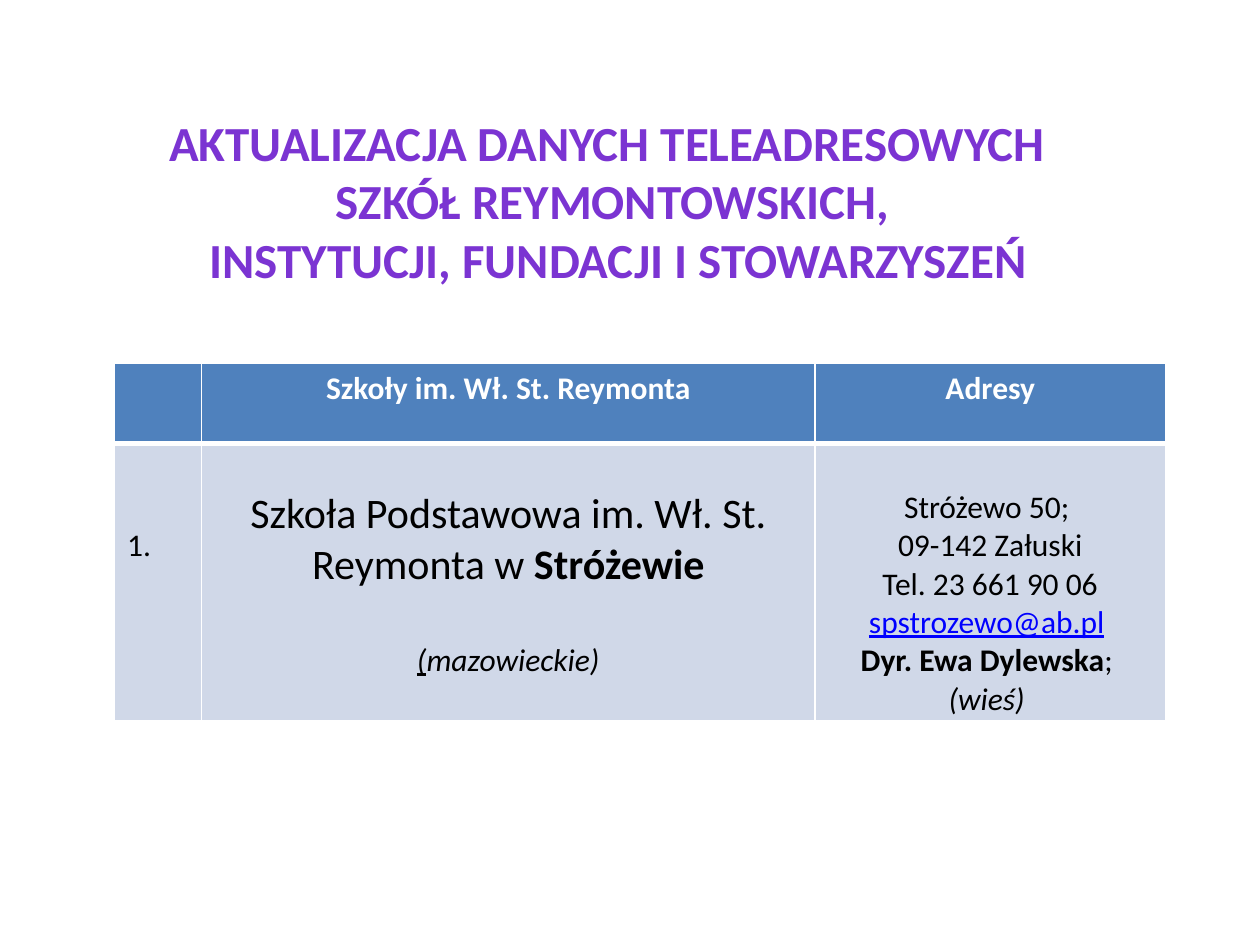
"""Build a slide with contact details of a school named after Reymont."""
from lxml.etree import SubElement
from pptx import Presentation
from pptx.dml.color import RGBColor
from pptx.enum.text import PP_ALIGN
from pptx.oxml.ns import qn
from pptx.util import Inches, Pt

COLORS = {
    "title": "7B34D2",
    "header": "4F81BD",
    "body": "D0D8E8",
    "border": "FFFFFF",
    "light": "FFFFFF",
    "dark": "000000",
    "email": "0000FF",
}
FONT = "Calibri"
COLUMN_WIDTHS = (0.69, 4.87, 2.78)
ROW_HEIGHTS = (0.64, 2.2)
INSET = 0.05
LINE = 0.305

TITLE = (
    "AKTUALIZACJA DANYCH TELEADRESOWYCH ",
    "SZKÓŁ REYMONTOWSKICH,",
    " INSTYTUCJI, FUNDACJI I STOWARZYSZEŃ",
)
HEADERS = ("", "Szkoły im. Wł. St. Reymonta", "Adresy")
NUMBER = [[("1.", {})]]
SCHOOL = [
    [
        ("Szkoła Podstawowa im. Wł. St. Reymonta w ", {"size": 24}),
        ("Stróżewie", {"size": 24, "bold": True}),
    ],
    [
        ("(", {"italic": True, "underline": True}),
        ("mazowieckie)", {"italic": True}),
    ],
]
ADDRESS = [
    [("Stróżewo 50; ", {})],
    [("09-142 Załuski", {})],
    [("Tel. 23 661 90 06", {})],
    [("spstrozewo@ab.pl", {"color": "email", "underline": True}), (" ", {})],
    [
        ("Dyr. Ewa Dylewska", {"bold": True}),
        (";  ", {}),
        ("(wieś) ", {"italic": True}),
    ],
]


def add_run(paragraph, text, size=18, color="dark", bold=False, italic=False, underline=False):
    """Append formatted text to a paragraph."""
    run = paragraph.add_run()
    run.text = text
    font = run.font
    font.name, font.size = FONT, Pt(size)
    font.bold, font.italic, font.underline = bold, italic, underline
    font.color.rgb = RGBColor.from_string(COLORS[color])


def write_lines(frame, lines, align=PP_ALIGN.CENTER, gap=0):
    """Write each line of (text, format) pairs as a paragraph."""
    for index, line in enumerate(lines):
        paragraph = frame.add_paragraph() if index else frame.paragraphs[0]
        paragraph.alignment = align
        if index and gap:
            paragraph.space_before = Pt(gap)
        for text, style in line:
            add_run(paragraph, text, **style)


def style_cell(cell, fill, top=1, bottom=1):
    """Fill a cell and give it solid borders with widths in points."""
    properties = cell._tc.get_or_add_tcPr()
    for side, width in (("L", 1), ("R", 1), ("T", top), ("B", bottom)):
        border = SubElement(properties, qn(f"a:ln{side}"), w=str(Pt(width)))
        solid = SubElement(border, qn("a:solidFill"))
        SubElement(solid, qn("a:srgbClr"), val=COLORS["border"])
    cell.fill.solid()
    cell.fill.fore_color.rgb = RGBColor.from_string(COLORS[fill])


def add_title(slide):
    """Add the three-line heading."""
    heading = slide.shapes.add_textbox(Inches(1.2), Inches(0.84), Inches(7.32), Inches(1.82))
    style = {"size": 28, "color": "title", "bold": True}
    heading.text_frame.word_wrap = False
    write_lines(heading.text_frame, [[(line, style)] for line in TITLE])


def add_school_table(slide):
    """Add the table of schools and addresses."""
    schools = slide.shapes.add_table(
        len(ROW_HEIGHTS), len(COLUMN_WIDTHS), Inches(0.91), Inches(2.88),
        Inches(sum(COLUMN_WIDTHS)), Inches(sum(ROW_HEIGHTS)),
    ).table
    for column, width in zip(schools.columns, COLUMN_WIDTHS):
        column.width = Inches(width)
    for row, height in zip(schools.rows, ROW_HEIGHTS):
        row.height = Inches(height)

    for cell, label in zip(schools.rows[0].cells, HEADERS):
        style_cell(cell, "header", bottom=3)
        if label:
            write_lines(cell.text_frame, [[(label, {"color": "light", "bold": True})]])

    entries = (
        (NUMBER, 2, PP_ALIGN.LEFT, 0),
        (SCHOOL, 1, PP_ALIGN.CENTER, 29),
        (ADDRESS, 1, PP_ALIGN.CENTER, 0),
    )
    for cell, (lines, offset, align, gap) in zip(schools.rows[1].cells, entries):
        style_cell(cell, "body", top=3)
        cell.margin_top = Inches(INSET + offset * LINE)
        cell.margin_bottom = 0
        write_lines(cell.text_frame, lines, align, gap)


def main():
    """Create and save the presentation."""
    presentation = Presentation()
    presentation.slide_width = Inches(10)
    presentation.slide_height = Inches(7.5)
    slide = presentation.slides.add_slide(presentation.slide_layouts[6])
    add_title(slide)
    add_school_table(slide)
    presentation.save("out.pptx")


if __name__ == "__main__":
    main()
